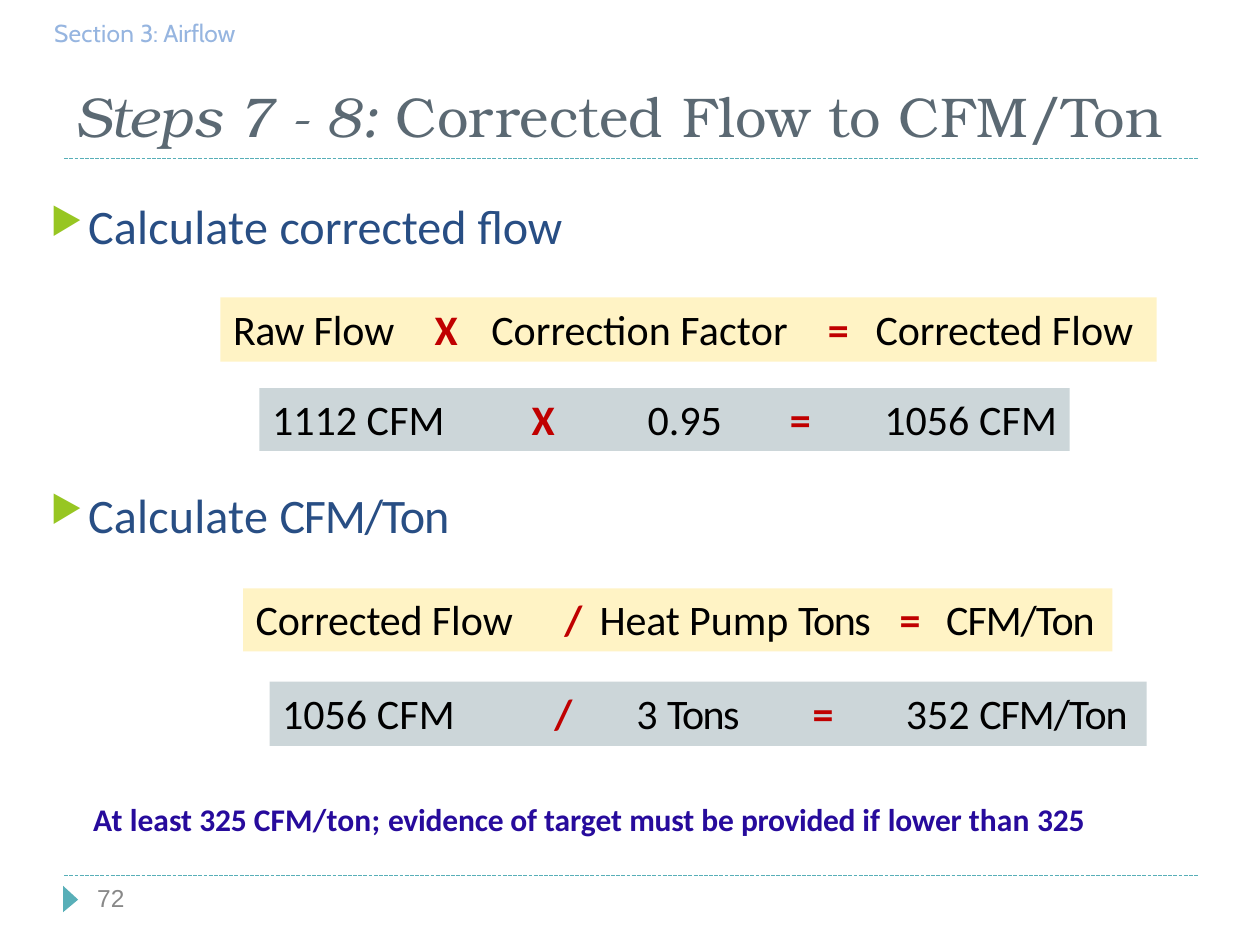
"""Build the slide on corrected flow and CFM per ton."""
from lxml import etree
from pptx import Presentation
from pptx import util as u
from pptx.dml.color import RGBColor
from pptx.enum import dml, shapes, text
from pptx.oxml.ns import qn

C = {"teal": "58AFB8", "slate": "5B6973", "green": "97C622", "blue": "284E84",
     "cream": "FFF3C5", "gray": "CCD6D9", "black": "000000", "red": "C00000",
     "sky": "96B5E0", "violet": "270B9C", "number": "888888"}
COLS, ROWS = 100, 75
CELL = u.Inches(0.1)


def grid(*cells):
    return [round(c * CELL) for c in cells]


def write(sp, runs, font, size, color, top=0.2, indent=0.1, bold=False):
    """Fill a shape with one line of (text, tracking) runs."""
    tf = sp.text_frame
    tf.word_wrap = True
    tf.auto_size = text.MSO_AUTO_SIZE.NONE
    tf.vertical_anchor = text.MSO_ANCHOR.TOP
    tf.margin_left, tf.margin_top, tf.margin_right, tf.margin_bottom = grid(0, top, 0, 0)
    p = tf.paragraphs[0]
    p.alignment = text.PP_ALIGN.LEFT
    p._p.get_or_add_pPr().set("marL", str(grid(indent)[0]))
    for words, tracking in runs:
        r = p.add_run()
        r.text = words
        f = r.font
        f.name, f.size, f.bold = font, u.Pt(size), bold
        f.color.rgb = RGBColor.from_string(C[color])
        r._r.get_or_add_rPr().set("spc", str(round(tracking * 100)))
    return p


prs = Presentation()
prs.slide_width, prs.slide_height = grid(COLS, ROWS)
s = prs.slides.add_slide(prs.slide_layouts[6])

for row in (69.5, 12.6):
    rule = s.shapes.add_connector(shapes.MSO_CONNECTOR.STRAIGHT, *grid(5.1, row, 95.1, row))
    rule.line.color.rgb = RGBColor.from_string(C["teal"])
    rule.line.width = u.Pt(0.75)
    rule.line.dash_style = dml.MSO_LINE.SQUARE_DOT
    etree.SubElement(rule._element.spPr, qn("a:effectLst"))

fb = s.shapes.build_freeform(*grid(5, 70.3))
fb.add_line_segments([grid(5, 72.4), grid(6.2, 71.4)], close=True)
marker = fb.convert_to_shape()
marker.shadow.inherit = False
marker.fill.solid()
marker.fill.fore_color.rgb = RGBColor.from_string(C["teal"])
marker.line.fill.background()

title = s.shapes.add_textbox(*grid(5.9, 6.3, 86.8, 5.7))
p = write(title, [("Steps ", -0.1), ("7 - ", 0.1), ("8: ", 0.2), ("Corrected ", 0.1),
                  ("Flow ", 0.2), ("to ", -0.1), ("CFM/Ton", 0.3)],
          "TeX Gyre Bonum", 32, "slate")
for r in p.runs[:3]:
    r.font.italic = True

steps = [
    (15.4, 42.2, [("Calculate ", 0.1), ("corrected ", 0), ("flow", -0.1)]),
    (38.3, 33.2, [("Calculate ", 0.1), ("CFM/Ton", -0.7)]),
]
for row, width, runs in steps:
    sp = s.shapes.add_textbox(*grid(3.8, row, width, 4.9))
    p = write(sp, runs, "Calibri", 27.5, "blue", indent=3.2)
    pPr = p._p.get_or_add_pPr()
    pPr.set("indent", str(grid(-3)[0]))
    color = etree.SubElement(pPr, qn("a:buClr"))
    etree.SubElement(color, qn("a:srgbClr"), val=C["green"])
    etree.SubElement(pPr, qn("a:buSzPct"), val="76000")
    etree.SubElement(pPr, qn("a:buChar"), char="▶")

formulas = [
    ((17.5, 23.6, 74.3, 5.1), "cream", 0.5, (16, 20.5, 47.2, 51),
     [("Raw ", -0.3), ("Flow\t", 0), ("X\t", 0), ("Correction ", 0), ("Factor\t", 0.1),
      ("=\t", 0), ("Corrected ", -0.1), ("Flow", 0.1)]),
    ((20.6, 30.8, 64.3, 5), "gray", 0.4, (20.6, 29.8, 41.1, 48.6),
     [("1112 ", 0), ("CFM\t", 0.1), ("X\t", 0), ("0.95\t", 0), ("=\t", 0),
      ("1056 ", 0), ("CFM", 0.1)]),
    ((19.3, 46.7, 69, 5), "cream", 0.4, (24.5, 27.3, 51.1, 54.8),
     [("Corrected ", -0.1), ("Flow\t", 0), ("/\t", 0), ("Heat ", -0.1), ("Pump ", 0),
      ("Tons\t", -0.9), ("=\t", 0), ("CFM/Ton", -0.6)]),
    ((21.4, 54.1, 69.6, 5.1), "gray", 0.5, (21.6, 28.1, 42.1, 49.5),
     [("1056 ", 0), ("CFM\t", 0.1), ("/\t", 0), ("3 ", 0), ("Tons\t", -0.9),
      ("=\t", 0), ("352 ", 0), ("CFM/Ton", -0.6)]),
]
for cells, fill, top, tabs, runs in formulas:
    sp = s.shapes.add_shape(shapes.MSO_SHAPE.RECTANGLE, *grid(*cells))
    sp.shadow.inherit = False
    sp.fill.solid()
    sp.fill.fore_color.rgb = RGBColor.from_string(C[fill])
    sp.line.fill.background()
    p = write(sp, runs, "Calibri", 24, "black", top, indent=1)
    tab_list = etree.SubElement(p._p.get_or_add_pPr(), qn("a:tabLst"))
    for pos in grid(*tabs):
        etree.SubElement(tab_list, qn("a:tab"), pos=str(pos), algn="l")
    for r in p.runs:
        if r.text.strip() in ("X", "/", "="):
            r.font.bold = True
            r.font.color.rgb = RGBColor.from_string(C["red"])

section = s.shapes.add_textbox(*grid(4.2, 1.2, 15.3, 2.7))
write(section, [("Section ", 0.1), ("3: Airflow", -0.1)], "Cabin", 14, "sky")

note = s.shapes.add_textbox(*grid(7.3, 63.4, 88.2, 3.3))
write(note, [("At ", 0.1), ("least ", 0), ("325 ", -0.1), ("CFM/ton; ", 0.1),
             ("evidence of ", -0.1), ("target ", 0), ("must ", -0.1), ("be ", 0),
             ("provided ", -0.2), ("if ", 0.1), ("lower ", -0.1), ("than ", 0.1),
             ("325", -0.1)], "Calibri", 18, "violet", top=0.1, bold=True)

number = s.shapes.add_textbox(*grid(7.3, 70.1, 3.1, 2.9))
p = write(number, [("72", 0.1)], "Arial", 14, "number", top=0, indent=0.4)
p.line_spacing = u.Pt(16.7)

prs.save("out.pptx")
